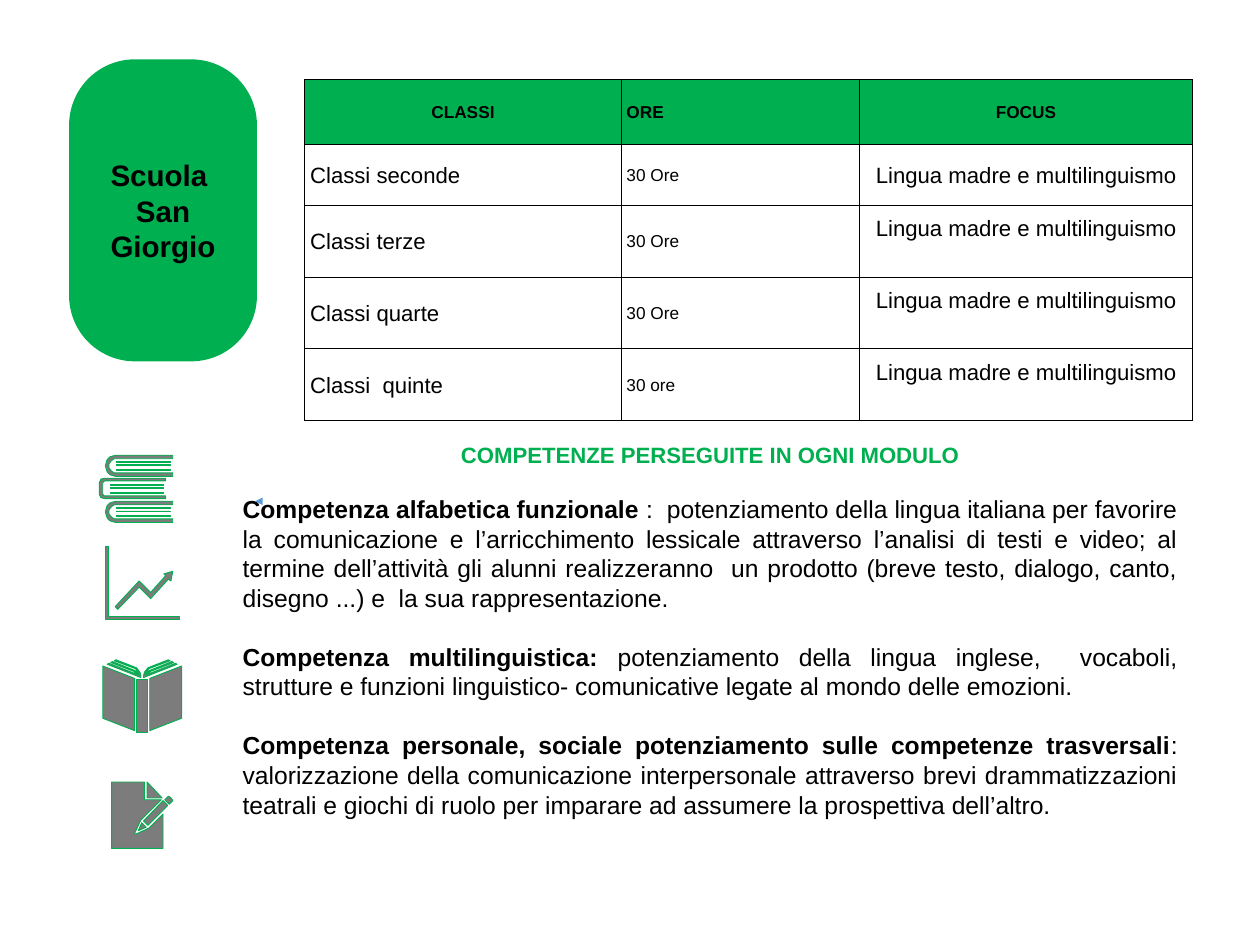
from dataclasses import dataclass
from math import cos, pi, sin

from lxml.etree import SubElement
from pptx import Presentation
from pptx.dml.color import RGBColor
from pptx.enum.shapes import MSO_CONNECTOR, MSO_SHAPE
from pptx.enum.text import MSO_ANCHOR, MSO_AUTO_SIZE, PP_ALIGN
from pptx.oxml.ns import qn
from pptx.util import Pt

PX = 9144  # 100 px to the inch
FONT = "Arial"
COLORS = {"green": "00B050", "gray": "7C7C7C", "black": "000000", "blue": "5B9BD5"}

Points = list[tuple[float, float]]


@dataclass
class Run:
    text: str
    size: int
    bold: bool = False
    color: str = "black"


@dataclass
class Skill:
    name: str
    detail: str


SKILLS = [
    Skill("Competenza alfabetica funzionale ",
          ":  potenziamento della lingua italiana per favorire la comunicazione e "
          "l’arricchimento lessicale attraverso l’analisi di testi e video; al termine "
          "dell’attività gli alunni realizzeranno  un prodotto (breve testo, dialogo, "
          "canto, disegno ...) e  la sua rappresentazione. "),
    Skill("Competenza multilinguistica: ",
          "potenziamento della lingua inglese,  vocaboli, strutture e funzioni "
          "linguistico- comunicative legate al mondo delle emozioni. "),
    Skill("Competenza personale, sociale potenziamento sulle competenze trasversali",
          ": valorizzazione della comunicazione interpersonale attraverso brevi "
          "drammatizzazioni teatrali e giochi di ruolo per imparare ad assumere la "
          "prospettiva dell’altro."),
]

FOCUS = "Lingua madre e multilinguismo"
ROWS = [
    ("CLASSI", "ORE", "FOCUS"),
    ("Classi seconde", "30 Ore", FOCUS),
    ("Classi terze", "30 Ore", FOCUS),
    ("Classi quarte", "30 Ore", FOCUS),
    ("Classi  quinte", "30 ore", FOCUS),
]
WIDTHS = (357, 269, 376)
HEIGHTS = (73, 69, 81, 81, 81)

CHART: list[Points] = [
    [(119, 617), (119, 699), (202, 699), (202, 696), (123, 696), (123, 617)],
    [(195, 645), (185, 648), (187, 650), (170, 669), (157, 656), (130, 685),
     (133, 688), (157, 663), (170, 676), (190, 654), (193, 656)],
]
NOTE: list[Points] = [
    [(126, 883), (126, 958), (184, 958), (184, 919), (168, 935), (166, 936), (153, 942),
     (152, 941), (158, 928), (159, 926), (182, 903), (163, 903), (163, 883)],
    [(166, 883), (166, 901), (183, 901)],
    [(190, 899), (186, 903), (191, 908), (195, 904), (194, 902), (192, 900)],
    [(184, 904), (162, 927), (167, 932), (189, 910), (189, 909)],
    [(160, 929), (156, 938), (165, 934)],
]
LEAVES: Points = [
    (131, 745), (129, 746), (153, 755), (157, 761), (152, 757), (127, 747), (125, 748),
    (151, 758), (156, 762), (123, 749), (121, 750), (159, 765), (159, 763), (158, 759),
    (154, 754)]
PAGE: Points = [(116, 752), (152, 766), (152, 825), (116, 811)]
CLOSED: Points = [
    (187, 540), (118, 540), (114, 541), (112, 545), (112, 558), (114, 562), (118, 563),
    (187, 563), (187, 560), (118, 560), (116, 558), (116, 545), (118, 543), (187, 543)]


def rgb(name: str) -> RGBColor:
    return RGBColor.from_string(COLORS[name])


def box(left: int, top: int, right: int, bottom: int) -> Points:
    return [(left, top), (right, top), (right, bottom), (left, bottom)]


def arc(x: int, y: int, radius: int) -> Points:
    """Half circle from top to bottom, bulging left."""
    turns = [pi * step / 10 for step in range(11)]
    return [(x - radius * sin(t), y - radius * cos(t)) for t in turns]


def lines(left: int, right: int, top: int) -> list[Points]:
    """Page edges of a book lying flat."""
    return [box(left, top + gap, right, top + gap + 1) for gap in (7, 11, 16)]


def round_book(top: int) -> list[Points]:
    outer, inner = arc(131, top + 12, 12), arc(131, top + 12, 8)
    cover = [(195, top), *outer, (195, top + 24),
             (195, top + 20), *inner[::-1], (195, top + 4)]
    return [cover, *lines(131, 192, top)]


def flip(points: Points) -> Points:
    """Mirror across the spine of the open book."""
    return [(321 - x, y) for x, y in points]


def draw_icon(shapes, paths: list[Points]) -> None:
    pen = shapes.build_freeform(*paths[0][0], scale=PX)
    for place, path in enumerate(paths):
        if place:
            pen.move_to(*path[0])
        pen.add_line_segments(path[1:], close=True)
    icon = pen.convert_to_shape()
    icon.shadow.inherit = False
    icon.fill.solid()
    icon.fill.fore_color.rgb = rgb("gray")
    icon.line.color.rgb = rgb("green")
    icon.line.width = Pt(0.75)


def write(par, runs: list[Run], align: PP_ALIGN) -> None:
    par.alignment = align
    par.line_spacing = Pt(runs[0].size * 1.2)
    for item in runs:
        run = par.add_run()
        run.text = item.text
        run.font.name = FONT
        run.font.size = Pt(item.size)
        run.font.bold = item.bold
        run.font.color.rgb = rgb(item.color)


def pad(frame, size: int) -> None:
    frame.margin_left = frame.margin_right = size * PX
    frame.margin_top = frame.margin_bottom = size * PX


def edge(cell) -> None:
    """Draw a thin black border on all four sides."""
    props = cell._tc.get_or_add_tcPr()
    for place, side in enumerate(("a:lnL", "a:lnR", "a:lnT", "a:lnB")):
        line = SubElement(props, qn(side), w=str(Pt(1)))
        fill = SubElement(line, qn("a:solidFill"))
        SubElement(fill, qn("a:srgbClr"), val=COLORS["black"])
        props.insert(place, line)


def draw_table(shapes) -> None:
    table = shapes.add_table(len(ROWS), len(WIDTHS), 344 * PX, 90 * PX,
                             sum(WIDTHS) * PX, sum(HEIGHTS) * PX).table
    table.first_row = table.horz_banding = False
    for col, width in zip(table.columns, WIDTHS):
        col.width = width * PX
    for y, (texts, height) in enumerate(zip(ROWS, HEIGHTS)):
        table.rows[y].height = height * PX
        for x, text in enumerate(texts):
            cell = table.cell(y, x)
            pad(cell, 6)
            if x == 2 and y > 1:
                cell.margin_bottom = 36 * PX
            cell.vertical_anchor = MSO_ANCHOR.MIDDLE
            if y == 0:
                cell.fill.solid()
                cell.fill.fore_color.rgb = rgb("green")
            else:
                cell.fill.background()
            edge(cell)
            mid = x == 2 or (x, y) == (0, 0)
            size = 14 if y == 0 or x == 1 else 18
            write(cell.text_frame.paragraphs[0], [Run(text, size, y == 0)],
                  PP_ALIGN.CENTER if mid else PP_ALIGN.LEFT)


def draw_school(shapes) -> None:
    pill = shapes.add_shape(MSO_SHAPE.ROUNDED_RECTANGLE,
                            78 * PX, 67 * PX, 212 * PX, 341 * PX)
    pill.adjustments[0] = 0.35
    pill.shadow.inherit = False
    pill.fill.solid()
    pill.fill.fore_color.rgb = rgb("green")
    pill.line.fill.background()
    frame = pill.text_frame
    frame.word_wrap = True
    frame.vertical_anchor = MSO_ANCHOR.MIDDLE
    pad(frame, 6)
    write(frame.paragraphs[0], [Run("Scuola  San Giorgio", 24, True)], PP_ALIGN.CENTER)


def draw_title(title) -> None:
    title.left, title.top, title.width, title.height = (
        264 * PX, 493 * PX, 1075 * PX, 40 * PX)
    frame = title.text_frame
    frame.auto_size = MSO_AUTO_SIZE.NONE
    frame.vertical_anchor = MSO_ANCHOR.TOP
    write(frame.paragraphs[0],
          [Run("COMPETENZE PERSEGUITE IN OGNI MODULO", 18, True, "green")],
          PP_ALIGN.CENTER)


def draw_skills(shapes) -> None:
    frame = shapes.add_textbox(264 * PX, 553 * PX, 1075 * PX, 377 * PX).text_frame
    frame.word_wrap = True
    for place, skill in enumerate(SKILLS):
        par = frame.add_paragraph() if place else frame.paragraphs[0]
        par.space_before = Pt(24 if place else 0)
        write(par, [Run(skill.name, 20, True), Run(skill.detail, 20)], PP_ALIGN.JUSTIFY)


def draw_arrow(shapes) -> None:
    arrow = shapes.add_connector(MSO_CONNECTOR.STRAIGHT,
                                 290 * PX, 566 * PX, 288 * PX, 566 * PX)
    arrow.line.color.rgb = rgb("blue")
    arrow.line.width = Pt(0.5)
    SubElement(arrow.line._get_or_add_ln(), qn("a:tailEnd"), type="triangle")
    SubElement(arrow._element.spPr, qn("a:effectLst"))


def main() -> None:
    deck = Presentation()
    deck.slide_width, deck.slide_height = 1422 * PX, 1067 * PX
    slide = deck.slides.add_slide(deck.slide_layouts[5])
    shapes = slide.shapes
    draw_title(shapes.title)
    draw_table(shapes)
    draw_school(shapes)
    draw_skills(shapes)
    draw_arrow(shapes)
    stack = [*round_book(514), CLOSED, *lines(125, 185, 540), *round_book(566)]
    opened = [LEAVES, flip(LEAVES), PAGE, flip(PAGE), box(154, 767, 166, 827)]
    for paths in (CHART, stack, opened, NOTE):
        draw_icon(shapes, paths)
    deck.save("out.pptx")


if __name__ == "__main__":
    main()
